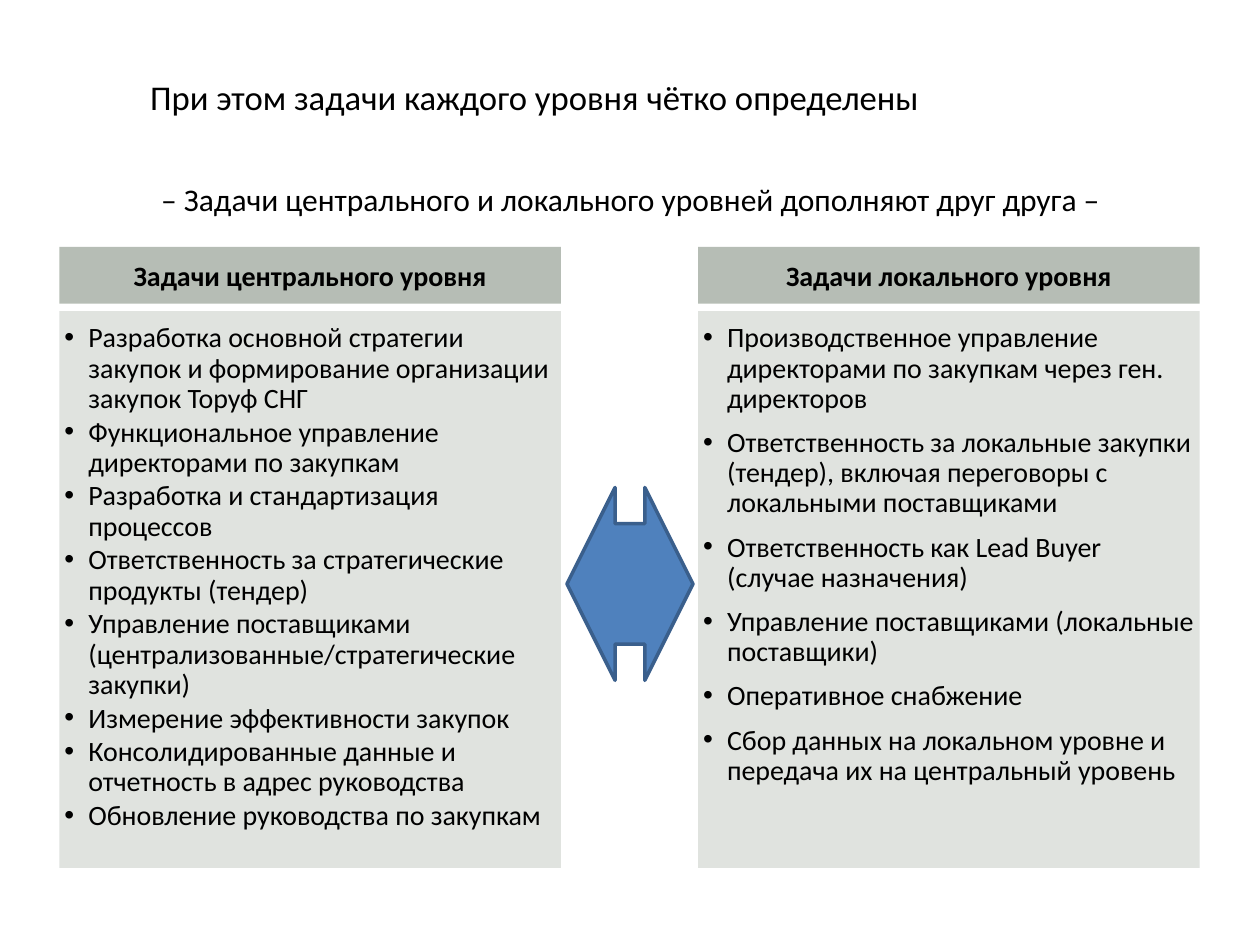
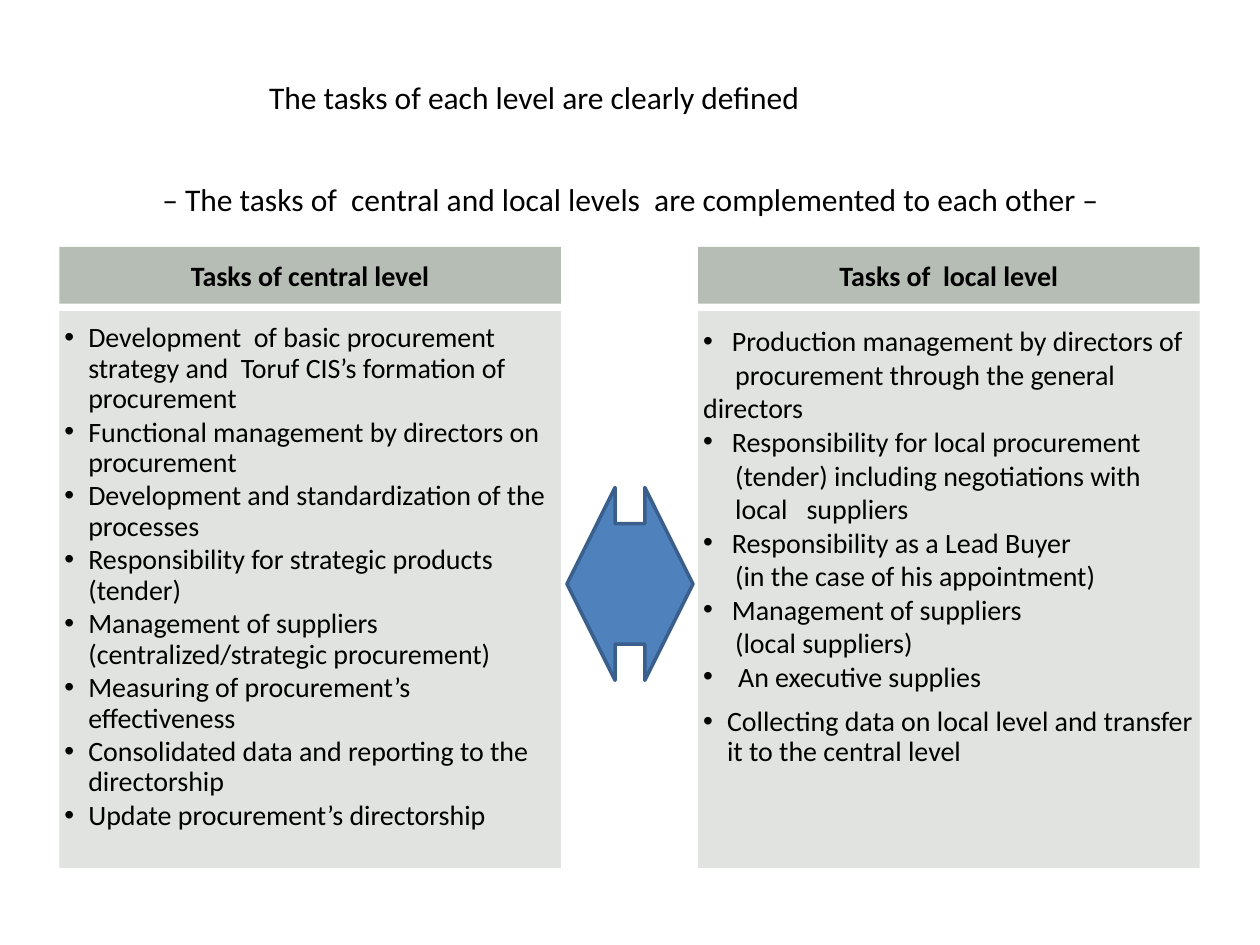
from lxml import etree
from pptx import Presentation
from pptx.dml.color import RGBColor
from pptx.enum import shapes, text
from pptx.oxml import ns
from pptx.util import Pt

FONT = "Calibri"
BLACK, HEAD_FILL, LIST_FILL = "000000", "B6BDB5", "E0E3DF"
ARROW_FILL, ARROW_LINE = "4F81BD", "3A5F8C"

# style: (left margin, first line indent, line spacing, space before, bullet)
STYLES = {
    "tight": (13.7, -13.7, 0.9, 2, True),
    "loose": (13.7, -13.7, 0.9, 8, True),
    "lead": (16.5, -16.5, 1, 0, True),
    "far lead": (20, -20, 1, 0, True),
    "follow": (0, 18.3, 1, 0, False),
}

SLIDES = [
    {
        "title": ("При этом задачи каждого уровня чётко определены", 19.8),
        "subtitle": "– Задачи центрального и локального уровней дополняют друг друга –",
        "columns": [
            ("Задачи центрального уровня", [
                ("tight", "Разработка основной стратегии закупок и формирование организации закупок Торуф СНГ"),
                ("tight", "Функциональное управление директорами по закупкам"),
                ("tight", "Разработка и стандартизация процессов"),
                ("tight", "Ответственность за стратегические продукты (тендер)"),
                ("tight", "Управление поставщиками (централизованные/стратегические закупки)"),
                ("tight", "Измерение эффективности закупок"),
                ("tight", "Консолидированные данные и отчетность в адрес руководства"),
                ("tight", "Обновление руководства по закупкам"),
            ]),
            ("Задачи локального уровня", [
                ("loose", "Производственное управление директорами по закупкам через ген. директоров"),
                ("loose", "Ответственность за локальные закупки (тендер), включая переговоры с локальными поставщиками"),
                ("loose", "Ответственность как Lead Buyer (случае назначения)"),
                ("loose", "Управление поставщиками (локальные поставщики)"),
                ("loose", "Оперативное снабжение"),
                ("loose", "Сбор данных на локальном уровне и передача их на центральный уровень"),
            ]),
        ],
    },
    {
        "title": ("The tasks of each level are clearly defined", 18),
        "subtitle": "– The tasks of  central and local levels  are complemented to each other –",
        "columns": [
            ("Tasks of central level", [
                ("tight", "Development  of basic procurement strategy and  Toruf CIS’s formation of procurement"),
                ("tight", "Functional management by directors on procurement"),
                ("tight", "Development and standardization of the processes"),
                ("tight", "Responsibility for strategic products (tender)"),
                ("tight", "Management of suppliers (centralized/strategic procurement)"),
                ("tight", "Measuring of procurement’s effectiveness"),
                ("tight", "Consolidated data and reporting to the directorship"),
                ("tight", "Update procurement’s directorship"),
            ]),
            ("Tasks of  local level", [
                ("lead", "Production management by directors of"),
                ("follow", "procurement through the general directors"),
                ("lead", "Responsibility for local procurement"),
                ("follow", "(tender) including negotiations with"),
                ("follow", "local   suppliers"),
                ("lead", "Responsibility as a Lead Buyer"),
                ("follow", "(in the case of his appointment)"),
                ("lead", "Management of suppliers"),
                ("follow", "(local suppliers)"),
                ("far lead", "An executive supplies"),
                ("loose", "Collecting data on local level and transfer it to the central level"),
            ]),
        ],
    },
]

COLUMN_LEFT, COLUMN_STEP, COLUMN_WIDTH = 33.9, 365, 286.6
HEAD_TOP, HEAD_HEIGHT = 141.1, 32.4
LIST_TOP, LIST_HEIGHT = 177.8, 318.2


def color(value):
    """Turn a hex string into a colour."""
    return RGBColor.from_string(value)


def format_runs(paragraph, size, bold=False):
    """Give every run of a paragraph the deck's font."""
    for span in paragraph.runs:
        span.font.name = FONT
        span.font.size = Pt(size)
        span.font.bold = bold
        span.font.color.rgb = color(BLACK)


def set_line(frame, words, size, bold=False):
    """Write one centred line in a text frame."""
    frame.text = words
    frame.word_wrap = True
    frame.paragraphs[0].alignment = text.PP_ALIGN.CENTER
    format_runs(frame.paragraphs[0], size, bold)


def set_insets(frame, left, top, right, bottom):
    """Set the four inner margins of a text frame."""
    frame.margin_left, frame.margin_top = Pt(left), Pt(top)
    frame.margin_right, frame.margin_bottom = Pt(right), Pt(bottom)


def add_filled(page, kind, place, fill):
    """Add a flat preset shape without an outline."""
    box = page.shapes.add_shape(kind, *map(Pt, place))
    box.shadow.inherit = False
    box.fill.solid()
    box.fill.fore_color.rgb = color(fill)
    box.line.fill.background()
    return box


def style_item(paragraph, style, first):
    """Apply indent, spacing and bullet of a named list style."""
    margin, indent, spacing, before, bullet = STYLES[style]
    properties = paragraph._p.get_or_add_pPr()
    properties.set("marL", str(Pt(margin)))
    properties.set("indent", str(Pt(indent)))
    if bullet:
        etree.SubElement(properties, ns.qn("a:buFont"), typeface="Arial")
        etree.SubElement(properties, ns.qn("a:buChar"), char="•")
    paragraph.alignment = text.PP_ALIGN.LEFT
    paragraph.line_spacing = spacing
    paragraph.space_before = Pt(0 if first else before)
    format_runs(paragraph, 16)


def add_column(page, left, heading, items):
    """Add a heading band and the list panel below it."""
    rectangle = shapes.MSO_SHAPE.RECTANGLE
    panel = add_filled(page, rectangle, (left, LIST_TOP, COLUMN_WIDTH, LIST_HEIGHT), LIST_FILL)
    frame = panel.text_frame
    frame.text = "\n".join(words for _, words in items)
    frame.word_wrap = True
    frame.vertical_anchor = text.MSO_ANCHOR.TOP
    set_insets(frame, 2.9, 7.2, 2.9, 0)
    for index, (style, _) in enumerate(items):
        style_item(frame.paragraphs[index], style, index == 0)
    band = add_filled(page, rectangle, (left, HEAD_TOP, COLUMN_WIDTH, HEAD_HEIGHT), HEAD_FILL)
    band.text_frame.vertical_anchor = text.MSO_ANCHOR.MIDDLE
    set_line(band.text_frame, heading, 16, True)


def add_arrow(page):
    """Add the double arrow between the columns."""
    arrow = add_filled(page, shapes.MSO_SHAPE.LEFT_RIGHT_ARROW, (324, 278.6, 72, 110.2), ARROW_FILL)
    arrow.adjustments[0], arrow.adjustments[1] = 0.625, 0.382
    arrow.line.color.rgb = color(ARROW_LINE)
    arrow.line.width = Pt(2)


def add_page(deck, content):
    """Build one comparison slide."""
    page = deck.slides.add_slide(deck.slide_layouts[5])
    title = page.shapes.title
    title.left, title.top, title.width, title.height = map(Pt, (34.6, 41.8, 541.4, 26.6))
    title.text_frame.vertical_anchor = text.MSO_ANCHOR.MIDDLE
    title.text_frame.auto_size = text.MSO_AUTO_SIZE.NONE
    set_line(title.text_frame, *content["title"])
    subtitle = page.shapes.add_textbox(*map(Pt, (57.6, 103, 605.5, 21.6))).text_frame
    set_insets(subtitle, 0, 0, 0, 0)
    subtitle.auto_size = text.MSO_AUTO_SIZE.SHAPE_TO_FIT_TEXT
    set_line(subtitle, content["subtitle"], 18)
    for index, (heading, items) in enumerate(content["columns"]):
        add_column(page, COLUMN_LEFT + index * COLUMN_STEP, heading, items)
    add_arrow(page)


def main():
    """Build and save the deck."""
    deck = Presentation()
    deck.slide_width, deck.slide_height = Pt(720), Pt(540)
    for content in SLIDES:
        add_page(deck, content)
    deck.save("out.pptx")


if __name__ == "__main__":
    main()
